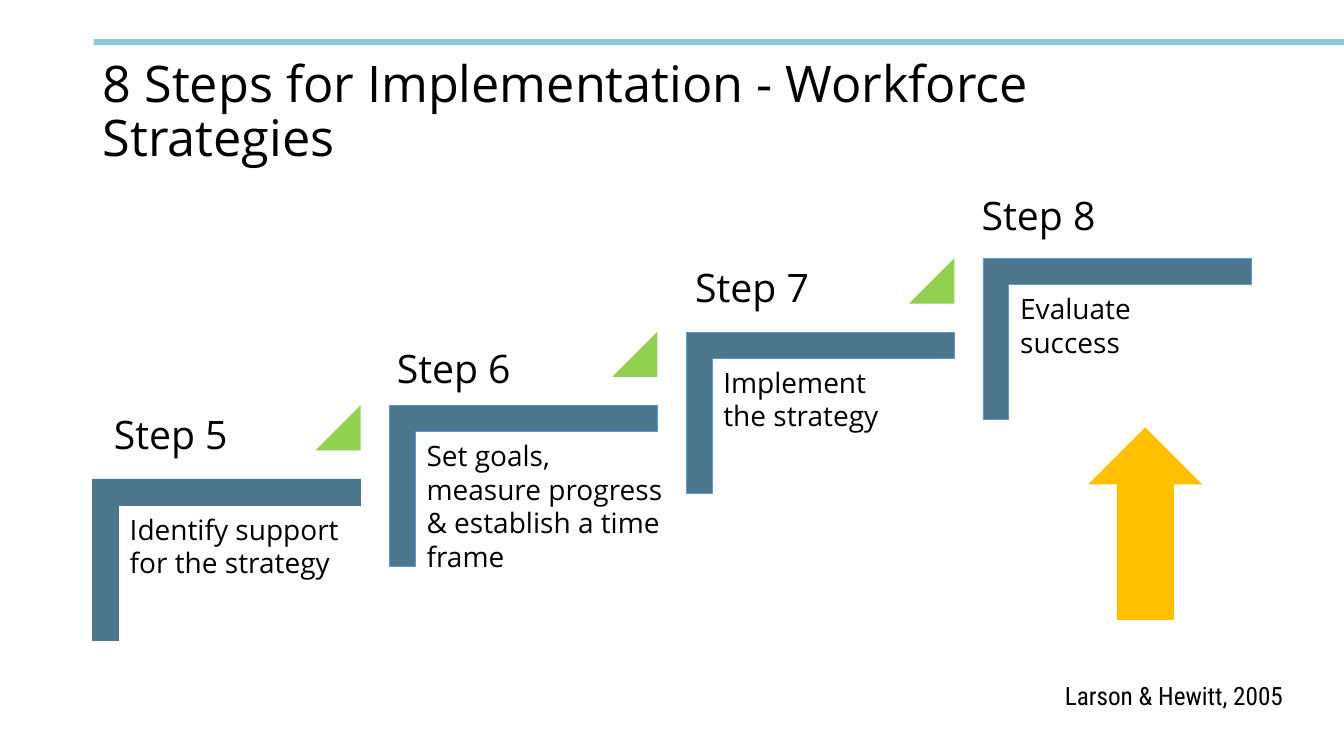
"""Build the slide on steps 5 to 8 of implementing workforce strategies."""
from pptx import Presentation
from pptx.dml.color import RGBColor
from pptx.enum.shapes import MSO_SHAPE
from pptx.enum.text import MSO_ANCHOR, MSO_AUTO_SIZE, PP_ALIGN
from pptx.util import Cm, Pt

RECT, CORNER = MSO_SHAPE.RECTANGLE, MSO_SHAPE.CORNER
TRIANGLE, UP_ARROW = MSO_SHAPE.ISOSCELES_TRIANGLE, MSO_SHAPE.UP_ARROW
LEFT, RIGHT = PP_ALIGN.LEFT, PP_ALIGN.RIGHT
TOP, MIDDLE = MSO_ANCHOR.TOP, MSO_ANCHOR.MIDDLE
GROW, FIXED = MSO_AUTO_SIZE.SHAPE_TO_FIT_TEXT, MSO_AUTO_SIZE.NONE

BLACK = RGBColor(0x00, 0x00, 0x00)
SKY = RGBColor(0x8E, 0xC7, 0xD7)
SLATE = RGBColor(0x4C, 0x76, 0x8C)
BLUE = RGBColor(0x5B, 0x9B, 0xD5)
GREEN = RGBColor(0x92, 0xD0, 0x50)
AMBER = RGBColor(0xFF, 0xC0, 0x00)

STEP_DX, STEP_DY = 7.48, 1.85
STEPS = [
    ("Step 5", (2.62, 10.21), "Identify support for the strategy", (5.82, 1.96), SLATE),
    ("Step 6", (9.75, 8.56), "Set goals,\vmeasure progress & establish a time frame",
     (6.78, 3.68), BLUE),
    ("Step 7", (17.27, 6.5), "Implement\vthe strategy", (6.05, 1.96), BLUE),
    ("Step 8", (24.49, 4.7), "Evaluate success", (5.74, 1.96), BLUE),
]


def add_text(shapes, text, x, y, w, h, size=20, font="Open Sans", align=LEFT,
             anchor=TOP, autosize=GROW, spacing=None):
    """Add a wrapped text box holding one formatted paragraph."""
    tf = shapes.add_textbox(Cm(x), Cm(y), Cm(w), Cm(h)).text_frame
    tf.word_wrap = True
    tf.auto_size = autosize
    tf.vertical_anchor = anchor
    p = tf.paragraphs[0]
    p.text = text
    p.alignment = align
    p.line_spacing = spacing
    for r in p.runs:
        r.font.size = Pt(size)
        r.font.name = font
        r.font.color.rgb = BLACK


def add_shape(shapes, kind, x, y, w, h, fill, line=None, adjust=(), rotation=0):
    """Add a flat preset shape."""
    sp = shapes.add_shape(kind, Cm(x), Cm(y), Cm(w), Cm(h))
    sp.shadow.inherit = False
    sp.rotation = rotation
    sp.fill.solid()
    sp.fill.fore_color.rgb = fill
    if line is None:
        sp.line.fill.background()
    else:
        sp.line.color.rgb = line
        sp.line.width = Pt(0.5)
    for i, value in enumerate(adjust):
        sp.adjustments[i] = value


def add_step(s, i, label, label_at, body, body_size, line):
    """Add one stair of the staircase as a group."""
    shapes = s.shapes.add_group_shape().shapes
    dx, dy = i * STEP_DX, i * STEP_DY
    add_shape(shapes, CORNER, 3.68 + dx, 10.72 - dy, 4.06, 6.76, SLATE,
              line=line, adjust=(0.161, 0.161), rotation=90)
    if i < len(STEPS) - 1:
        add_shape(shapes, TRIANGLE, 7.95 + dx, 10.21 - dy, 1.14, 1.14, GREEN, adjust=(1,))
    add_text(shapes, label, *label_at, 5.33, 1.45, size=28)
    add_text(shapes, body, 3.02 + dx, 12.78 - dy, *body_size)


def main():
    """Build and save the slide."""
    prs = Presentation()
    prs.slide_width, prs.slide_height = Cm(33.87), Cm(19.05)
    s = prs.slides.add_slide(prs.slide_layouts[6])
    add_shape(s.shapes, RECT, 2.36, 0.99, 31.51, 0.15, SKY)
    add_text(s.shapes, "8 Steps for Implementation - Workforce Strategies",
             2.34, 1.02, 29.21, 3.68, size=36, anchor=MIDDLE, autosize=FIXED, spacing=0.9)
    add_text(s.shapes, "Larson & Hewitt, 2005", 25.5, 17.02, 7.09, 1.02,
             size=18, font="Roboto Condensed", align=RIGHT)
    for i, step in enumerate(STEPS):
        add_step(s, i, *step)
    add_shape(s.shapes, UP_ARROW, 27.43, 10.77, 2.87, 4.85, AMBER)
    prs.save("out.pptx")


if __name__ == "__main__":
    main()
